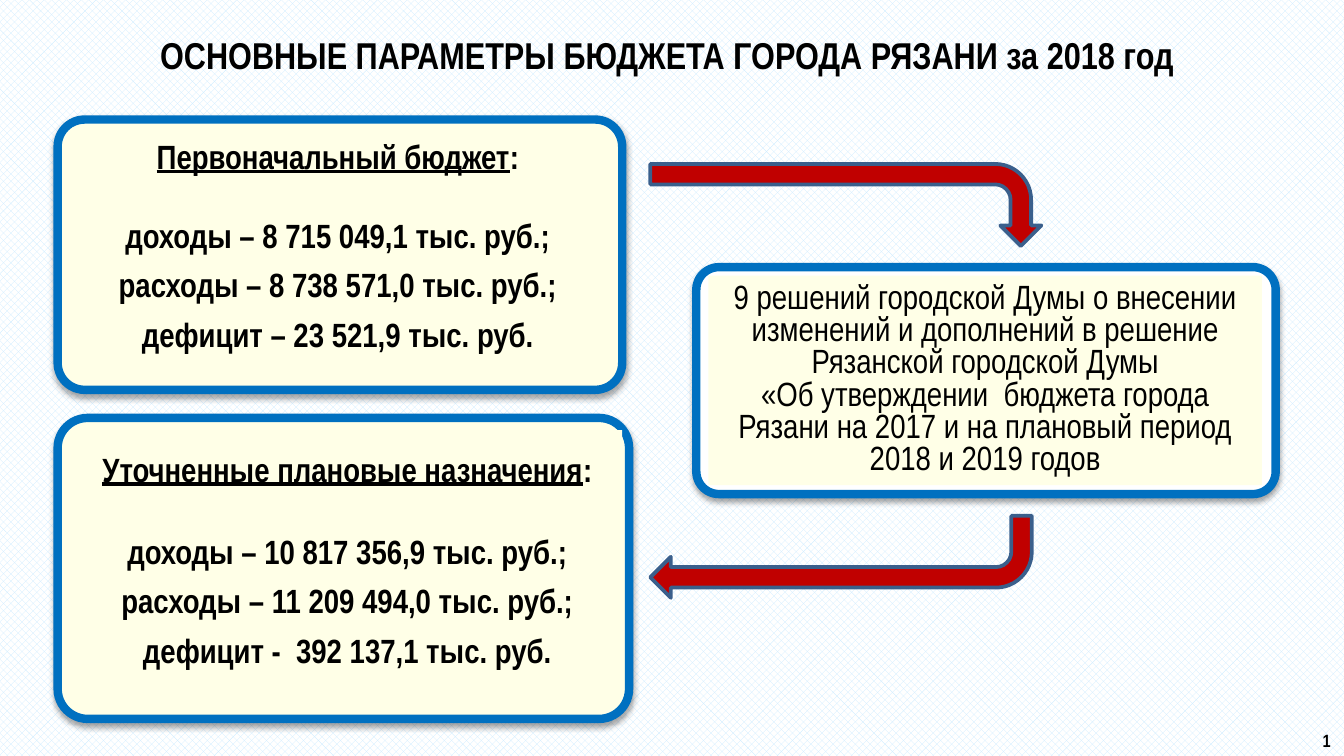
"""Build the slide with the main parameters of the Ryazan city budget."""
from lxml.etree import SubElement
from pptx import Presentation
from pptx.dml.color import RGBColor
from pptx.enum.dml import MSO_PATTERN
from pptx.enum.shapes import MSO_SHAPE as Preset
from pptx.enum.text import MSO_ANCHOR as Anchor, MSO_AUTO_SIZE as AutoSize, PP_ALIGN as Align
from pptx.oxml.ns import qn
from pptx.util import Cm, Pt

FONT = "Arial Narrow"
BLACK = RGBColor(0x00, 0x00, 0x00)
WHITE = RGBColor(0xFF, 0xFF, 0xFF)
PALE_BLUE = RGBColor(0xCC, 0xEC, 0xFF)
CREAM = RGBColor(0xFF, 0xFF, 0xE7)
BLUE = RGBColor(0x00, 0x70, 0xC0)
RED = RGBColor(0xC0, 0x00, 0x00)
STEEL = RGBColor(0x3A, 0x5F, 0x8C)


def place(box, area):
    """Move and size a box to an area given in centimetres."""
    box.left, box.top, box.width, box.height = map(Cm, area)


def add_span(para, text, size=18, bold=True, underline=False):
    """Append formatted text to a paragraph."""
    span = para.add_run()
    span.text = text
    font = span.font
    font.name, font.size, font.bold, font.underline = FONT, Pt(size), bold, underline
    font.color.rgb = BLACK
    return span


def set_para(para, align=Align.CENTER, spacing=0.9, after=7):
    """Set the alignment and spacing of a paragraph."""
    para.alignment, para.line_spacing, para.space_after = align, spacing, Pt(after)


def add_shape(shapes, preset, area, fill, line=None, weight=0):
    """Add a filled preset shape without shadow."""
    shape = shapes.add_shape(preset, *map(Cm, area))
    shape.fill.solid()
    shape.fill.fore_color.rgb = fill
    if line is None:
        shape.line.fill.background()
    else:
        shape.line.color.rgb = line
        shape.line.width = Pt(weight)
    shape.shadow.inherit = False
    return shape


def add_shadow(shape):
    """Give a shape a soft shadow below it."""
    effects = shape._element.spPr.find(qn("a:effectLst"))
    shadow = SubElement(effects, qn("a:outerShdw"), blurRad=str(Pt(3.1)), dist=str(Pt(1.8)),
                        dir="5400000", rotWithShape="0")
    color = SubElement(shadow, qn("a:srgbClr"), val="000000")
    SubElement(color, qn("a:alpha"), val="35000")


def add_card(page, frame_area, text_area, fill=CREAM):
    """Add a framed card and return its text frame."""
    group = page.shapes.add_group_shape()
    frame = add_shape(group.shapes, Preset.ROUNDED_RECTANGLE, frame_area, fill, BLUE, 4.5)
    frame.adjustments[0] = 0.1
    add_shadow(frame)
    body = add_shape(group.shapes, Preset.RECTANGLE, text_area, CREAM).text_frame
    body.word_wrap = True
    body.vertical_anchor = Anchor.MIDDLE
    body.margin_left = body.margin_right = body.margin_top = body.margin_bottom = Cm(0.18)
    return body


def fill_budget(body, heading, figures, heading_spacing=0.9):
    """Write an underlined heading and the budget figures below it."""
    para = body.paragraphs[0]
    set_para(para, spacing=heading_spacing, after=24.5)
    add_span(para, heading, underline=True)
    add_span(para, ":")
    for figure in figures:
        para = body.add_paragraph()
        set_para(para)
        add_span(para, figure)


def add_arrow(page, area, rotation):
    """Add a bent red arrow."""
    arrow = add_shape(page.shapes, Preset.BENT_ARROW, area, RED, STEEL, 2)
    arrow.rotation = rotation


def set_title(page, text):
    """Place and format the title."""
    title = page.shapes.title
    place(title, (1.09, 0.69, 23.04, 0.69))
    body = title.text_frame
    body.auto_size = AutoSize.NONE
    body.vertical_anchor = Anchor.MIDDLE
    set_para(body.paragraphs[0], spacing=1.0, after=0)
    add_span(body.paragraphs[0], text, size=20)


def add_page_number(page, text):
    """Add the page number in the lower right corner."""
    body = page.shapes.add_textbox(*map(Cm, (24.13, 13.59, 1.27, 0.66))).text_frame
    body.word_wrap = True
    set_para(body.paragraphs[0], Align.RIGHT, spacing=1.0, after=0)
    span = add_span(body.paragraphs[0], text, size=11.9)
    span._r.get_or_add_rPr().set("cap", "small")


def main():
    """Build and save the deck."""
    deck = Presentation()
    deck.slide_width, deck.slide_height = Cm(25.4), Cm(14.29)
    page = deck.slides.add_slide(deck.slide_layouts[5])
    backdrop = page.background.fill
    backdrop.patterned()
    backdrop.pattern = MSO_PATTERN.LARGE_CHECKER_BOARD
    backdrop.fore_color.rgb, backdrop.back_color.rgb = PALE_BLUE, WHITE

    set_title(page, "ОСНОВНЫЕ ПАРАМЕТРЫ БЮДЖЕТА ГОРОДА РЯЗАНИ за 2018 год")

    initial = add_card(page, (1.09, 2.26, 10.67, 5.11), (1.37, 2.41, 10.03, 4.78))
    fill_budget(initial, "Первоначальный бюджет", (
        "доходы – 8 715 049,1 тыс. руб.;",
        "расходы – 8 738 571,0 тыс. руб.;",
        "дефицит – 23 521,9 тыс. руб."), heading_spacing=0.5)

    decisions = add_card(page, (13.16, 5.05, 10.95, 4.29), (13.39, 5.21, 10.46, 3.96), WHITE)
    para = decisions.paragraphs[0]
    set_para(para, spacing=0.8)
    add_span(para, "9 решений городской Думы о внесении изменений и дополнений "
                   "в решение Рязанской городской Думы", bold=False)
    para.add_line_break()
    add_span(para, "«Об утверждении  бюджета города Рязани на 2017 "
                   "и на плановый период 2018 и 2019 годов", bold=False)

    add_arrow(page, (15.21, 0.18, 1.55, 7.39), 90)
    add_arrow(page, (12.29, 9.75, 7.21, 1.55), 180)
    add_page_number(page, "1")

    revised = add_card(page, (1.09, 7.9, 10.8, 5.69), (1.37, 8.13, 10.39, 4.98))
    fill_budget(revised, "Уточненные плановые назначения", (
        "доходы – 10 817 356,9 тыс. руб.;",
        "расходы – 11 209 494,0 тыс. руб.;",
        "дефицит -  392 137,1 тыс. руб."))

    deck.save("out.pptx")


if __name__ == "__main__":
    main()
